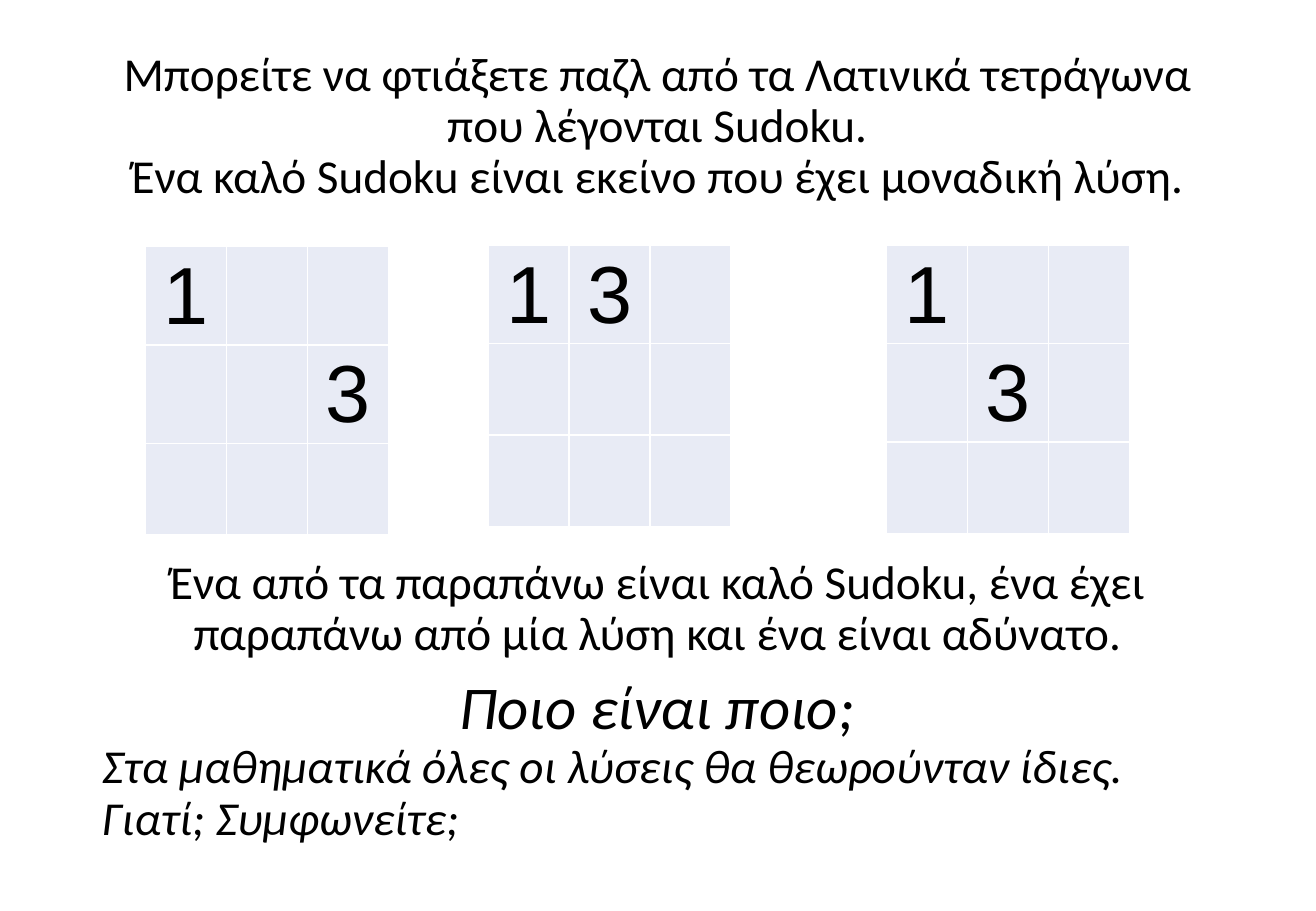
from lxml import etree
from pptx import Presentation
from pptx.dml.color import RGBColor
from pptx.enum.text import MSO_ANCHOR, PP_ALIGN as Align
from pptx.oxml.ns import qn
from pptx.util import Pt

COLORS = {"text": "000000", "cell": "E8EBF5", "border": "FFFFFF"}
GRID_SIZE = 3
COLUMN_WIDTH, ROW_HEIGHT = 48, 54.2
BODY_LEFT, BODY_WIDTH = 53.3, 672.5

# Left, top and clues {(row, column): digit} of each puzzle
PUZZLES = [
    (86.4, 146.2, {(0, 0): "1", (1, 2): "3"}),
    (289.4, 145.4, {(0, 0): "1", (0, 1): "3"}),
    (525.6, 145.4, {(0, 0): "1", (1, 1): "3"}),
]


def write_text(paragraph, text, size=28, font="Calibri", italic=False,
               align=Align.CENTER, before=0, spacing=0.9):
    paragraph.alignment = align
    paragraph.space_before = Pt(before)
    paragraph.line_spacing = spacing
    run = paragraph.add_run()
    run.text = text
    run.font.size = Pt(size)
    run.font.name = font
    run.font.italic = italic
    run.font.color.rgb = RGBColor.from_string(COLORS["text"])


def add_body(slide, top, height, lines):
    """Add a text box from (text, format) pairs, one paragraph each."""
    shape = slide.shapes.add_textbox(Pt(BODY_LEFT), Pt(top), Pt(BODY_WIDTH), Pt(height))
    frame = shape.text_frame
    frame.word_wrap = True
    for index, (text, style) in enumerate(lines):
        paragraph = frame.add_paragraph() if index else frame.paragraphs[0]
        write_text(paragraph, text, **style)


def set_borders(cell):
    properties = cell._tc.get_or_add_tcPr()
    for index, side in enumerate(("lnL", "lnR", "lnT", "lnB")):
        line = etree.Element(qn(f"a:{side}"), w=str(Pt(1)))
        fill = etree.SubElement(line, qn("a:solidFill"))
        etree.SubElement(fill, qn("a:srgbClr"), val=COLORS["border"])
        properties.insert(index, line)


def add_puzzle(slide, left, top, clues):
    table = slide.shapes.add_table(
        GRID_SIZE, GRID_SIZE, Pt(left), Pt(top),
        Pt(GRID_SIZE * COLUMN_WIDTH), Pt(GRID_SIZE * ROW_HEIGHT)).table
    table.first_row = table.horz_banding = False
    for column in table.columns:
        column.width = Pt(COLUMN_WIDTH)
    for row_index, row in enumerate(table.rows):
        row.height = Pt(ROW_HEIGHT)
        for column_index, cell in enumerate(row.cells):
            cell.fill.solid()
            cell.fill.fore_color.rgb = RGBColor.from_string(COLORS["cell"])
            set_borders(cell)
            cell.vertical_anchor = MSO_ANCHOR.MIDDLE
            cell.margin_left = cell.margin_right = cell.margin_top = Pt(0.7)
            cell.margin_bottom = Pt(0)
            clue = clues.get((row_index, column_index))
            if clue:
                write_text(cell.text_frame.paragraphs[0], clue,
                           size=48, font="Arial", spacing=1.0)


def main():
    presentation = Presentation()
    presentation.slide_width, presentation.slide_height = Pt(780), Pt(540)
    slide = presentation.slides.add_slide(presentation.slide_layouts[6])

    # Introduction
    add_body(slide, 26.6, 100, [
        ("Μπορείτε να φτιάξετε παζλ από τα Λατινικά τετράγωνα που λέγονται Sudoku.", {}),
        ("Ένα καλό Sudoku είναι εκείνο που έχει μοναδική λύση.", {}),
    ])

    # Questions
    closing = {"italic": True, "align": Align.LEFT}
    add_body(slide, 327.6, 180, [
        ("Ένα από τα παραπάνω είναι καλό Sudoku, ένα έχει παραπάνω από μία λύση "
         "και ένα είναι αδύνατο.", {}),
        ("Ποιο είναι ποιο;", {"size": 36, "italic": True, "before": 10}),
        ("Στα μαθηματικά όλες οι λύσεις θα θεωρούνταν ίδιες.", closing),
        ("Γιατί; Συμφωνείτε;", closing),
    ])

    # Puzzles
    for left, top, clues in PUZZLES:
        add_puzzle(slide, left, top, clues)

    presentation.save("out.pptx")


if __name__ == "__main__":
    main()
